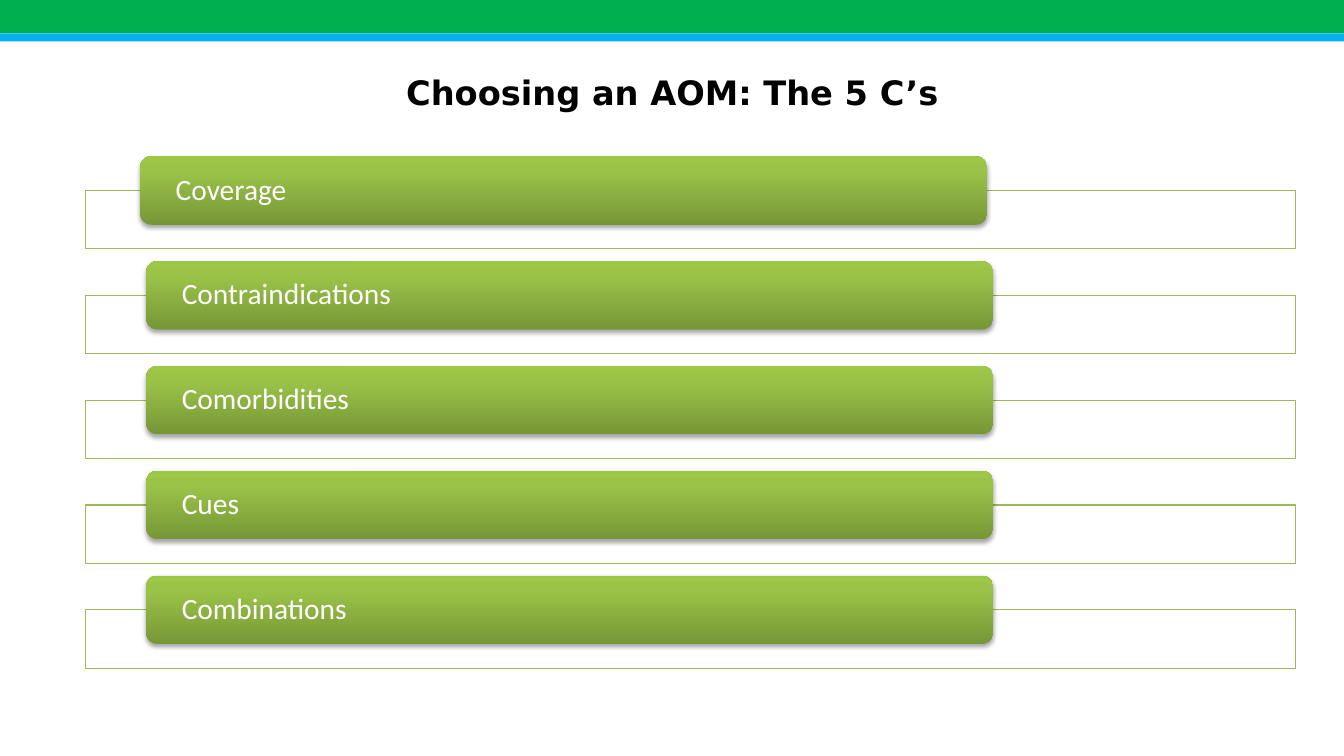
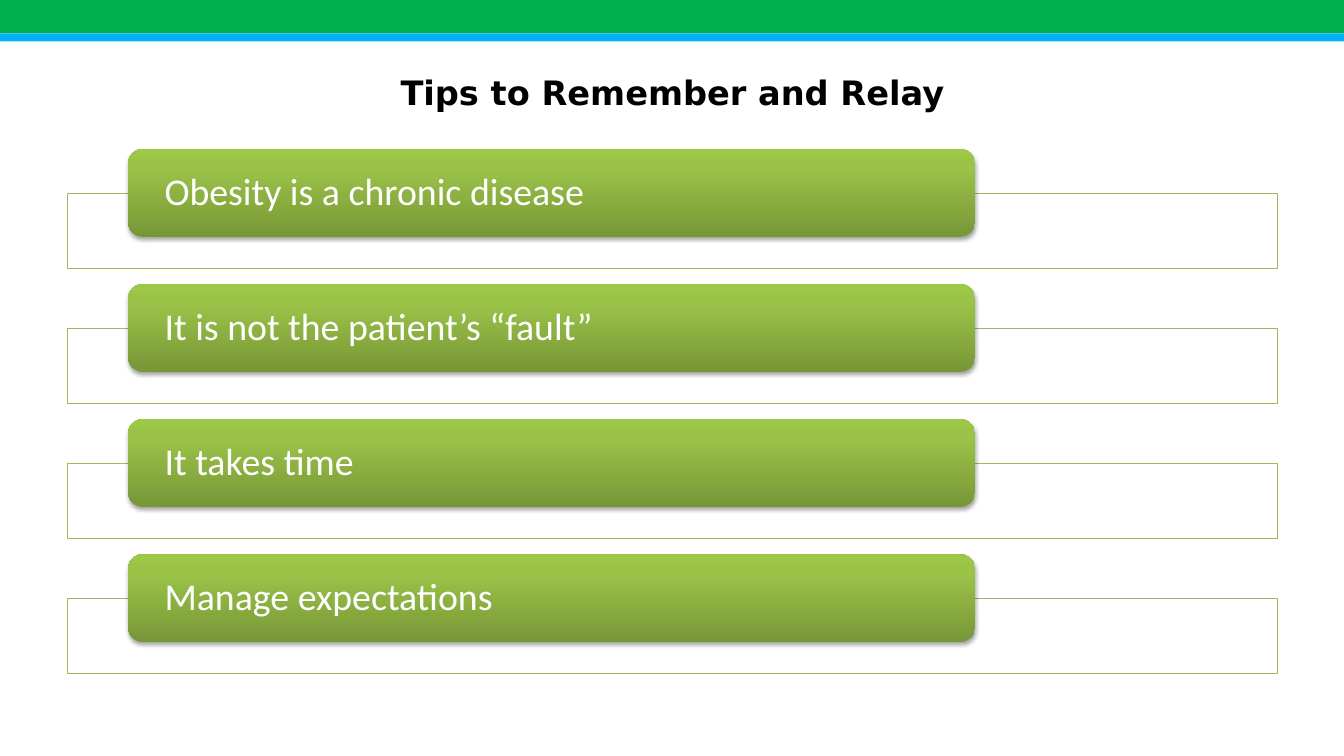
from lxml import etree
from pptx import Presentation
from pptx.dml.color import RGBColor
from pptx.enum.shapes import MSO_SHAPE
from pptx.enum.text import MSO_ANCHOR, PP_ALIGN
from pptx.oxml.ns import qn
from pptx.util import Inches, Pt

RECTANGLE = MSO_SHAPE.RECTANGLE
ROUNDED = MSO_SHAPE.ROUNDED_RECTANGLE
MIDDLE = MSO_ANCHOR.MIDDLE
LEFT = PP_ALIGN.LEFT
CENTER = PP_ALIGN.CENTER

BLACK = RGBColor(0x00, 0x00, 0x00)
WHITE = RGBColor(0xFF, 0xFF, 0xFF)
BAND_GREEN = RGBColor(0x00, 0xB0, 0x50)
BAND_BLUE = RGBColor(0x00, 0xB0, 0xF0)
FRAME_GREEN = RGBColor(0x9B, 0xBB, 0x59)
DARK_GREEN = RGBColor(0x77, 0x97, 0x37)
MID_GREEN = RGBColor(0x9B, 0xC3, 0x48)
LIGHT_GREEN = RGBColor(0x9D, 0xC7, 0x46)

BANDS = [(0.33, 0.08, BAND_BLUE), (0, 0.33, BAND_GREEN)]
LABEL_STOPS = [(0, DARK_GREEN), (80000, MID_GREEN), (100000, LIGHT_GREEN)]

SLIDES = [
    {
        "title": "Choosing an AOM: The 5 C’s",
        "items": ["Coverage", "Contraindications", "Comorbidities", "Cues", "Combinations"],
        "frame": (0.85, 1.89, 0.58),
        "label": (1.55, 0.68),
        "label_lefts": [1.39, 1.45, 1.45, 1.45, 1.45],
        "pitch": 1.04,
        "size": 21,
    },
    {
        "title": "Tips to Remember and Relay",
        "items": [
            "Obesity is a chronic disease",
            "It is not the patient’s “fault”",
            "It takes time",
            "Manage expectations",
        ],
        "frame": (0.67, 1.92, 0.74),
        "label": (1.48, 0.87),
        "label_lefts": [1.27] * 4,
        "pitch": 1.34,
        "size": 27,
    },
]


def add_block(slide, kind, left, top, width, height, color):
    block = slide.shapes.add_shape(kind, Inches(left), Inches(top), Inches(width), Inches(height))
    block.shadow.inherit = False
    block.fill.solid()
    block.fill.fore_color.rgb = color
    block.line.fill.background()
    return block


def write_text(holder, text, font_name, size, color, alignment):
    frame = holder.text_frame
    frame.word_wrap = True
    frame.vertical_anchor = MIDDLE
    frame.text = text
    paragraph = frame.paragraphs[0]
    paragraph.alignment = alignment
    font = paragraph.runs[0].font
    font.name = font_name
    font.size = Pt(size)
    font.color.rgb = color
    return paragraph


prs = Presentation()
prs.slide_width = Inches(13.33)
prs.slide_height = Inches(7.5)

for content in SLIDES:
    slide = prs.slides.add_slide(prs.slide_layouts[6])
    for band_top, band_height, band_color in BANDS:
        add_block(slide, RECTANGLE, 0, band_top, 13.33, band_height, band_color)

    title = slide.shapes.add_textbox(Inches(0.67), Inches(0.52), Inches(12), Inches(0.79))
    heading = write_text(title, content["title"], "DejaVu Sans", 24, BLACK, CENTER)
    heading.runs[0].font.bold = True

    frame_left, frame_top, frame_height = content["frame"]
    label_top, label_height = content["label"]
    for row, (item, label_left) in enumerate(zip(content["items"], content["label_lefts"])):
        offset = row * content["pitch"]
        row_frame = add_block(slide, RECTANGLE, frame_left, frame_top + offset, 12, frame_height, WHITE)
        row_frame.line.color.rgb = FRAME_GREEN
        row_frame.line.width = Pt(0.75)
        frame_color = row_frame.element.spPr.find(qn("a:solidFill"))[0]
        etree.SubElement(frame_color, qn("a:alpha"), val="90000")

        label = add_block(slide, ROUNDED, label_left, label_top + offset, 8.4, label_height, MID_GREEN)
        label.fill.gradient()
        label.fill.gradient_angle = 90
        label_properties = label.element.spPr
        stops = label_properties.find(qn("a:gradFill")).find(qn("a:gsLst"))
        for stop in list(stops):
            stops.remove(stop)
        for position, color in LABEL_STOPS:
            stop = etree.SubElement(stops, qn("a:gs"), pos=str(position))
            etree.SubElement(stop, qn("a:srgbClr"), val=str(color))

        shadow = etree.SubElement(
            label_properties.find(qn("a:effectLst")), qn("a:outerShdw"),
            blurRad=str(Pt(3.1)), dist=str(Pt(1.8)), dir="5400000", rotWithShape="0",
        )
        shadow_color = etree.SubElement(shadow, qn("a:srgbClr"), val=str(BLACK))
        etree.SubElement(shadow_color, qn("a:alpha"), val="35000")

        label_text = write_text(label, item, "Calibri", content["size"], WHITE, LEFT)
        label_text.line_spacing = 0.9
        label.text_frame.margin_left = label.text_frame.margin_right = Inches(0.32)
        label.text_frame.margin_top = label.text_frame.margin_bottom = 0

prs.save("out.pptx")
